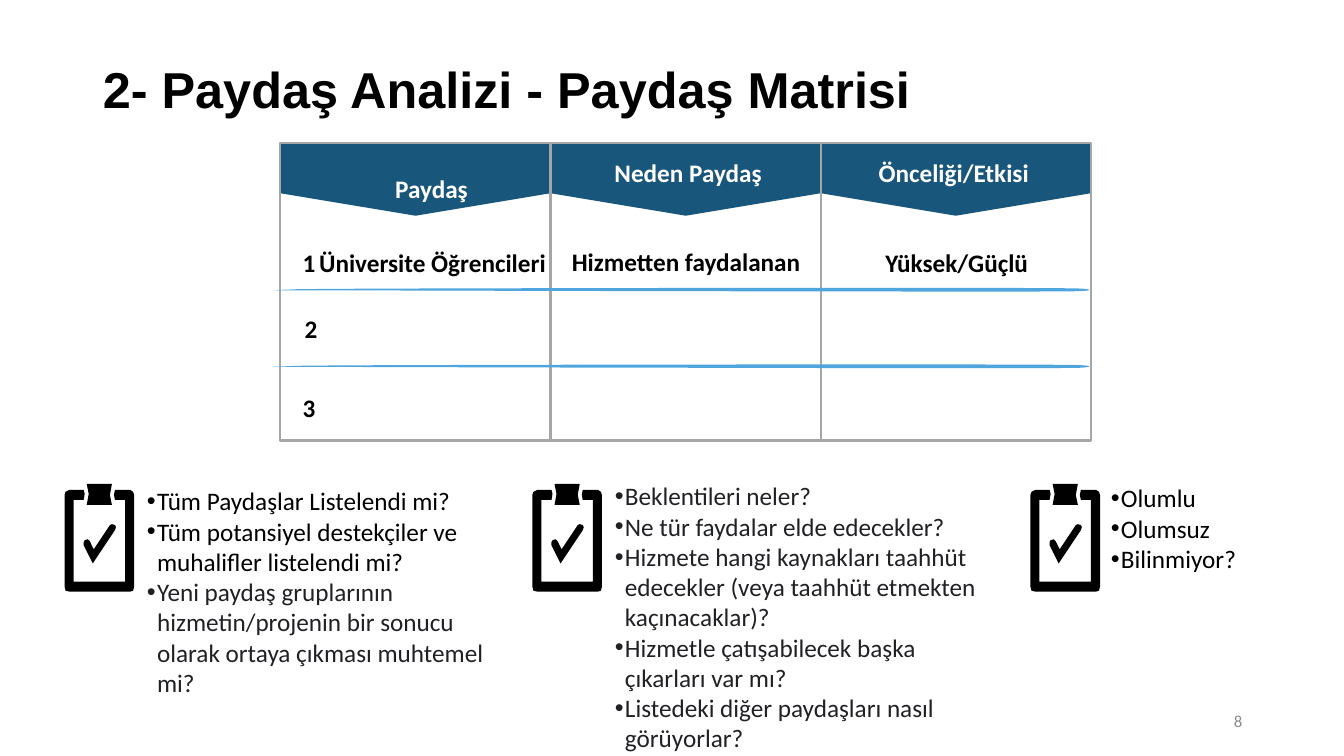
from dataclasses import dataclass

from lxml.etree import SubElement
from pptx import Presentation
from pptx.dml.color import RGBColor
from pptx.enum.shapes import MSO_SHAPE as Preset
from pptx.enum.text import MSO_ANCHOR as Anchor, MSO_AUTO_SIZE as AutoSize, PP_ALIGN as Align
from pptx.oxml.ns import qn
from pptx.util import Inches, Pt


@dataclass(frozen=True)
class Theme:
    heading_font: str = "Arial"
    body_font: str = "Calibri"
    title_size: int = 36
    body_size: int = 18
    number_size: int = 12
    black: str = "000000"
    white: str = "FFFFFF"
    question: str = "202124"
    number: str = "8C8C8C"
    header: str = "19567C"
    border: str = "A6A6A6"
    stroke: str = "4EA6DC"


THEME = Theme()
CARD_LEFT, CARD_TOP, CARD_WIDTH, CARD_HEIGHT = 2.78, 1.42, 2.68, 2.95
HEADER_HEIGHT = 0.72
LINE_HEIGHT = 0.4

# text, left, top, width
HEADINGS = [
    ("Paydaş", 3.81, 1.67, 0.94),
    ("Neden Paydaş", 5.98, 1.51, 1.69),
    ("Önceliği/Etkisi", 8.61, 1.51, 1.7),
]
ENTRIES = [
    ("1", 2.9, 2.4, 0.33),
    ("2", 2.92, 3.06, 0.33),
    ("3", 2.9, 3.84, 0.33),
    ("Üniversite Öğrencileri", 3.05, 2.4, 2.48),
    ("Hizmetten faydalanan", 5.55, 2.39, 2.51),
    ("Yüksek/Güçlü", 8.67, 2.4, 1.64),
]
# icon left, text box, questions with their colours
CHECKLISTS = [
    (0.64, (1.36, 4.77, 3.8, 2.22), [
        ("Tüm Paydaşlar Listelendi mi?", THEME.black),
        ("Tüm potansiyel destekçiler ve muhalifler listelendi mi?", THEME.black),
        ("Yeni paydaş gruplarının hizmetin/projenin bir sonucu olarak "
         "ortaya çıkması muhtemel mi?", THEME.question),
    ]),
    (5.28, (6, 4.72, 3.79, 2.83), [
        ("Beklentileri neler?", THEME.question),
        ("Ne tür faydalar elde edecekler?", THEME.question),
        ("Hizmete hangi kaynakları taahhüt edecekler "
         "(veya taahhüt etmekten kaçınacaklar)?", THEME.question),
        ("Hizmetle çatışabilecek başka çıkarları var mı?", THEME.question),
        ("Listedeki diğer paydaşları nasıl görüyorlar?", THEME.question),
    ]),
    (10.22, (10.92, 4.74, 1.46, 1.01), [
        ("Olumlu", THEME.black),
        ("Olumsuz", THEME.black),
        ("Bilinmiyor?", THEME.black),
    ]),
]

ICON_TOP = 4.8
CHECK_MARK = [(0.28, 0.79), (0.19, 0.61), (0.19, 0.58), (0.2, 0.56), (0.23, 0.55),
              (0.25, 0.57), (0.29, 0.65), (0.45, 0.41), (0.47, 0.4), (0.5, 0.41),
              (0.51, 0.43), (0.5, 0.46)]
BOARD = [(0.65, 0.06), (0.5, 0.06), (0.49, 0.11), (0.5, 0.16), (0.6, 0.16), (0.6, 0.97),
         (0.09, 0.97), (0.09, 0.16), (0.19, 0.16), (0.2, 0.1), (0.19, 0.06), (0.05, 0.06),
         (0.01, 0.08), (0, 0.11), (0, 1.02), (0.01, 1.06), (0.05, 1.07), (0.65, 1.07),
         (0.68, 1.06), (0.69, 1.02), (0.69, 0.11), (0.68, 0.08)]
CLIP = [(0.47, 0.21), (0.45, 0.11), (0.47, 0), (0.22, 0), (0.24, 0.1), (0.22, 0.21)]

# Bézier control points, measured from the stroke's upper edge
STROKE_CURVES = [
    [(2.94, 0.03), (2.94, 0.03), (10.39, 0.05), (10.66, 0.04)],
    [(10.66, 0.04), (10.82, 0.04), (10.93, 0.01), (10.53, 0.01)],
    [(10.53, 0.01), (9.89, 0), (3.15, 0.01), (2.94, 0.02)],
    [(2.94, 0.02), (2.72, 0.03), (2.56, 0.03), (2.94, 0.03)],
]


def color(value):
    return RGBColor.from_string(value)


def write(paragraph, text, *, size=THEME.body_size, font=THEME.body_font,
          ink=THEME.black, bold=False, align=Align.LEFT):
    paragraph.alignment = align
    run = paragraph.add_run()
    run.text = text
    run.font.size = Pt(size)
    run.font.name = font
    run.font.bold = bold
    run.font.color.rgb = color(ink)


def add_box(slide, box, *, wrap=False, anchor=Anchor.TOP, auto_size=AutoSize.SHAPE_TO_FIT_TEXT):
    frame = slide.shapes.add_textbox(*map(Inches, box)).text_frame
    frame.word_wrap = wrap
    frame.auto_size = auto_size
    frame.vertical_anchor = anchor
    return frame


def add_label(slide, text, left, top, width, ink):
    frame = add_box(slide, (left, top, width, LINE_HEIGHT))
    write(frame.paragraphs[0], text, ink=ink, bold=True, align=Align.CENTER)


def add_bullet(paragraph):
    properties = paragraph._p.get_or_add_pPr()
    properties.set("marL", str(Inches(0.1)))
    properties.set("indent", str(Inches(-0.1)))
    SubElement(properties, qn("a:buFont")).set("typeface", "Arial")
    SubElement(properties, qn("a:buChar")).set("char", "•")


def paint(shape, fill):
    shape.shadow.inherit = False
    shape.fill.solid()
    shape.fill.fore_color.rgb = color(fill)
    shape.line.fill.background()


def add_outline(slide, contours, left, top, fill):
    """Draw closed contours, given in inches from left and top, as one shape."""
    placed = [[(Inches(left + x), Inches(top + y)) for x, y in contour] for contour in contours]
    builder = slide.shapes.build_freeform(*placed[0][0])
    for index, points in enumerate(placed):
        if index:
            builder.move_to(*points[0])
        builder.add_line_segments(points[1:], close=True)
    paint(builder.convert_to_shape(), fill)


def sample_curve(controls, steps=16):
    """Return points along a cubic Bézier curve, without its end point."""
    points = []
    for step in range(steps):
        t = step / steps
        weights = ((1 - t) ** 3, 3 * t * (1 - t) ** 2, 3 * t ** 2 * (1 - t), t ** 3)
        points.append(tuple(sum(w * point[axis] for w, point in zip(weights, controls))
                            for axis in (0, 1)))
    return points


def add_card(slide, left):
    header_left = left + (CARD_WIDTH - HEADER_HEIGHT) / 2
    header_top = CARD_TOP + (HEADER_HEIGHT - CARD_WIDTH) / 2
    header = slide.shapes.add_shape(Preset.PENTAGON, Inches(header_left), Inches(header_top),
                                    Inches(HEADER_HEIGHT), Inches(CARD_WIDTH))
    header.rotation = 90
    header.adjustments[0] = 0.31
    paint(header, THEME.header)

    card = slide.shapes.add_shape(Preset.ROUNDED_RECTANGLE, Inches(left), Inches(CARD_TOP),
                                  Inches(CARD_WIDTH), Inches(CARD_HEIGHT))
    card.adjustments[0] = 0
    card.shadow.inherit = False
    card.fill.background()
    card.line.color.rgb = color(THEME.border)
    card.line.width = Pt(1.5)


def add_checklist(slide, icon_left, box, questions):
    add_outline(slide, [CHECK_MARK, BOARD, CLIP], icon_left, ICON_TOP, THEME.black)
    frame = add_box(slide, box, wrap=True)
    for index, (question, ink) in enumerate(questions):
        paragraph = frame.add_paragraph() if index else frame.paragraphs[0]
        write(paragraph, question, ink=ink)
        add_bullet(paragraph)


def set_title(slide, text):
    title = slide.shapes.title
    title.left, title.top, title.width, title.height = map(Inches, (0.92, 0.19, 11.5, 1.45))
    frame = title.text_frame
    frame.auto_size = AutoSize.NONE
    frame.vertical_anchor = Anchor.MIDDLE
    frame.paragraphs[0].line_spacing = 0.9
    write(frame.paragraphs[0], text, size=THEME.title_size, font=THEME.heading_font, bold=True)


def main():
    presentation = Presentation()
    presentation.slide_width, presentation.slide_height = Inches(13.33), Inches(7.5)
    slide = presentation.slides.add_slide(presentation.slide_layouts[5])
    set_title(slide, "2- Paydaş Analizi - Paydaş Matrisi")

    number = add_box(slide, (9.42, 6.95, 3, 0.4), wrap=True, anchor=Anchor.MIDDLE,
                     auto_size=AutoSize.NONE)
    write(number.paragraphs[0], "8", size=THEME.number_size, ink=THEME.number, align=Align.RIGHT)

    for column, heading in enumerate(HEADINGS):
        add_card(slide, CARD_LEFT + column * CARD_WIDTH)
        add_label(slide, *heading, THEME.white)
    stroke = [point for curve in STROKE_CURVES for point in sample_curve(curve)]
    for top in (2.85, 3.61):
        add_outline(slide, [stroke], 0, top, THEME.stroke)
    for entry in ENTRIES:
        add_label(slide, *entry, THEME.black)
    for checklist in CHECKLISTS:
        add_checklist(slide, *checklist)

    presentation.save("out.pptx")


if __name__ == "__main__":
    main()
